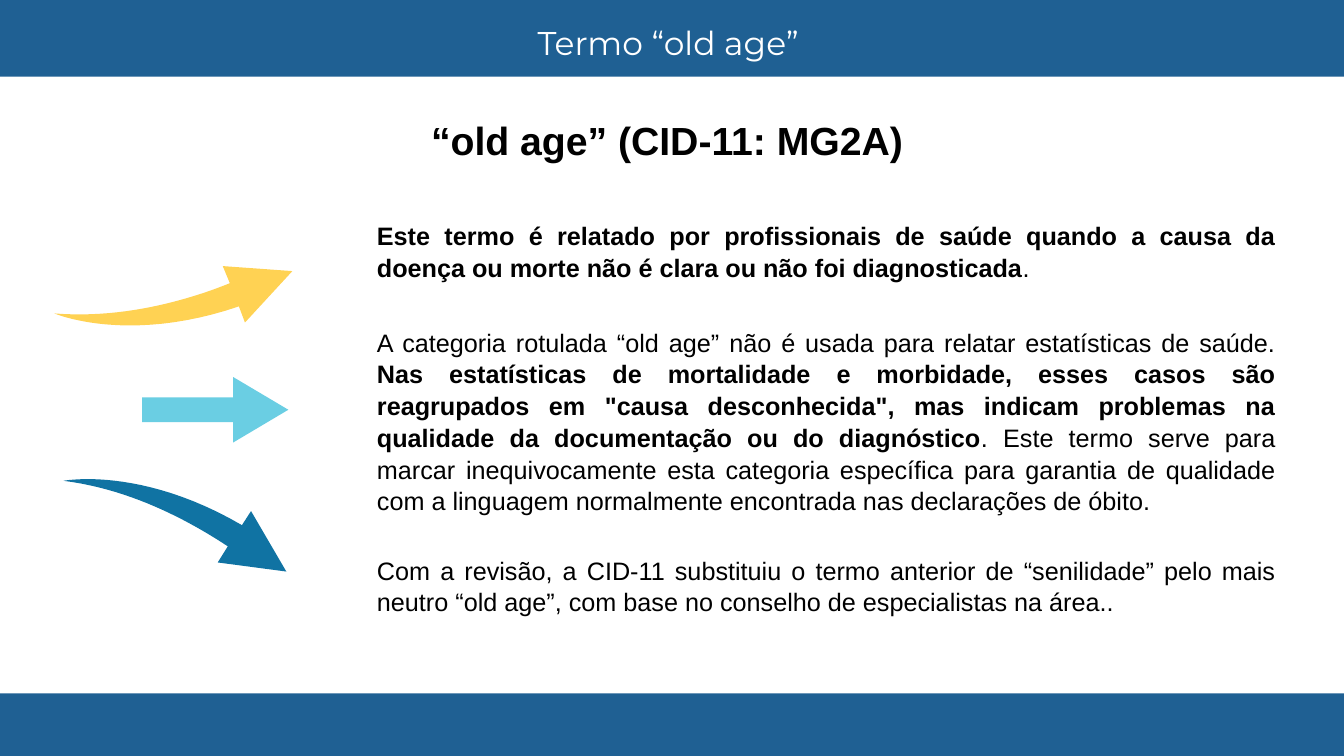
"""Builds the slide on the CID-11 term "old age", with three arrows and three paragraphs."""
from dataclasses import dataclass

from lxml import etree
from pptx import Presentation
from pptx import util as u
from pptx.dml.color import RGBColor
from pptx.enum import shapes, text

PX = 9144
W, H = 1333, 750


@dataclass(frozen=True)
class Theme:
    band: str = "1F6093"
    white: str = "FFFFFF"
    black: str = "000000"
    yellow: str = "FFD253"
    cyan: str = "6ACEE3"
    blue: str = "1073A3"
    title_font: str = "Montserrat"
    body_font: str = "Arial"
    title_size: float = 23.5
    heading_size: float = 28
    body_size: float = 18


class Deck:
    def __init__(self, theme):
        self.theme = theme
        self.prs = Presentation()
        self.prs.slide_width, self.prs.slide_height = W * PX, H * PX
        self.s = self.prs.slides.add_slide(self.prs.slide_layouts[6])

    def paint(self, sp, color):
        sp.shadow.inherit = False
        sp.fill.solid()
        sp.fill.fore_color.rgb = RGBColor.from_string(color)
        sp.line.fill.background()

    def shape(self, kind, box, color, adjustments=()):
        sp = self.s.shapes.add_shape(kind, *(v * PX for v in box))
        for i, value in enumerate(adjustments):
            sp.adjustments[i] = value
        self.paint(sp, color)

    def curve(self, start, c1, c2, end, steps=24):
        for i in range(1, steps + 1):
            t = i / steps
            yield tuple(
                (1 - t) ** 3 * a + 3 * (1 - t) ** 2 * t * b + 3 * (1 - t) * t ** 2 * c + t ** 3 * d
                for a, b, c, d in zip(start, c1, c2, end)
            )

    def swoosh(self, head, upper, lower, last, color):
        points = [*head, *self.curve(head[-1], *upper), *self.curve(upper[-1], *lower), last]
        points = [(round(x * PX), round(y * PX)) for x, y in points]
        builder = self.s.shapes.build_freeform(*points[0], scale=1.0)
        builder.add_line_segments(points[1:], close=True)
        self.paint(builder.convert_to_shape(), color)

    def text(self, box, runs, size, font=None, color=None, align=text.PP_ALIGN.CENTER,
             anchor=text.MSO_ANCHOR.TOP, spacing=1.0):
        tf = self.s.shapes.add_textbox(*(v * PX for v in box)).text_frame
        for name, value in {"word_wrap": True, "vertical_anchor": anchor}.items():
            setattr(tf, name, value)
        p = tf.paragraphs[0]
        for name, value in {"alignment": align, "line_spacing": spacing}.items():
            setattr(p, name, value)
        for words, bold in runs:
            r = p.add_run()
            r.text = words
            style = {"name": font or self.theme.body_font, "size": u.Pt(size), "bold": bold}
            for name, value in style.items():
                setattr(r.font, name, value)
            r.font.color.rgb = RGBColor.from_string(color or self.theme.black)


BODY = [
    (212, 71, [
        ("Este termo é relatado por profissionais de saúde quando a causa da doença ou morte "
         "não é clara ou não foi diagnosticada", True),
        (". ", False),
    ]),
    (318, 192, [
        ("A categoria rotulada “old age” não é usada para relatar estatísticas de saúde. ", False),
        ("Nas estatísticas de mortalidade e morbidade, esses casos são reagrupados em "
         "\"causa desconhecida\", mas indicam problemas na qualidade da documentação ou do "
         "diagnóstico", True),
        (". Este termo serve para marcar inequivocamente esta categoria específica para garantia "
         "de qualidade com a linguagem normalmente encontrada nas declarações de óbito.", False),
    ]),
    (544, 71, [
        ("Com a revisão, a CID-11 substituiu o termo anterior de “senilidade” pelo mais neutro "
         "“old age”, com base no conselho de especialistas na área..", False),
    ]),
]


def main():
    theme = Theme()
    deck = Deck(theme)
    kinds = shapes.MSO_SHAPE

    for top, height in ((0, 76), (688, 62)):
        deck.shape(kinds.RECTANGLE, (0, top, W, height), theme.band)
    deck.text((44, 13, 1246, 62), [("Termo “old age” ", False)], theme.title_size,
              theme.title_font, theme.white, anchor=text.MSO_ANCHOR.MIDDLE, spacing=0.9)

    deck.swoosh([(284, 567), (249, 507), (240, 521)],
                [(139, 462), (63, 477), (63, 477)],
                [(136, 486), (197, 523), (226, 542)], (216, 558), theme.blue)
    deck.swoosh([(290, 269), (243, 320), (237, 304)],
                [(126, 342), (54, 311), (54, 311)],
                [(128, 317), (196, 294), (228, 281)], (221, 264), theme.yellow)
    deck.shape(kinds.RIGHT_ARROW, (141, 374, 145, 65), theme.cyan, (0.377, 0.842))

    deck.text((386, 110, 562, 57), [("“old age” (CID-11: MG2A) ", True)], theme.heading_size)
    for top, height, runs in BODY:
        deck.text((364, top, 911, height), runs, theme.body_size,
                  align=text.PP_ALIGN.JUSTIFY, spacing=1.05)

    deck.prs.save("out.pptx")


if __name__ == "__main__":
    main()
